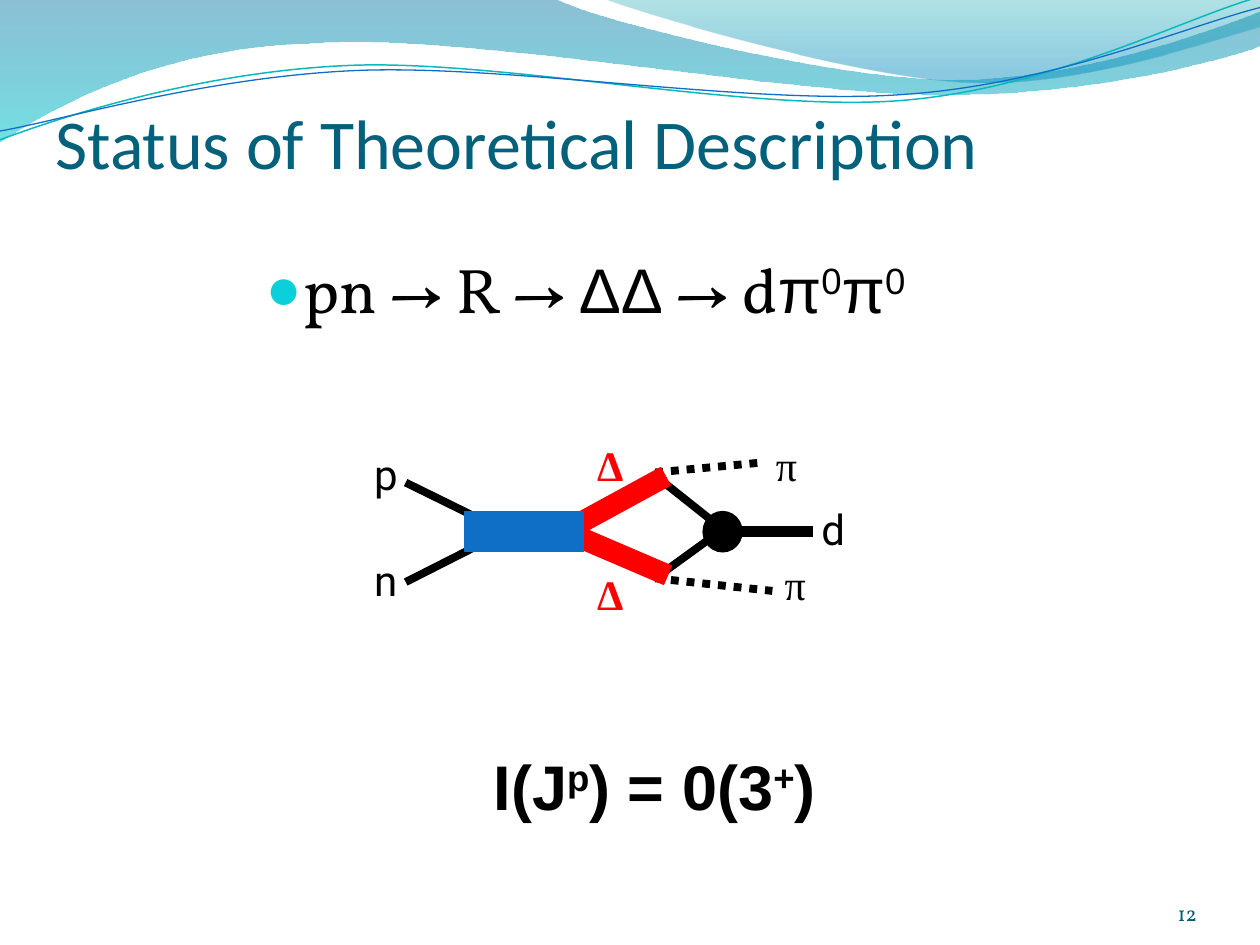
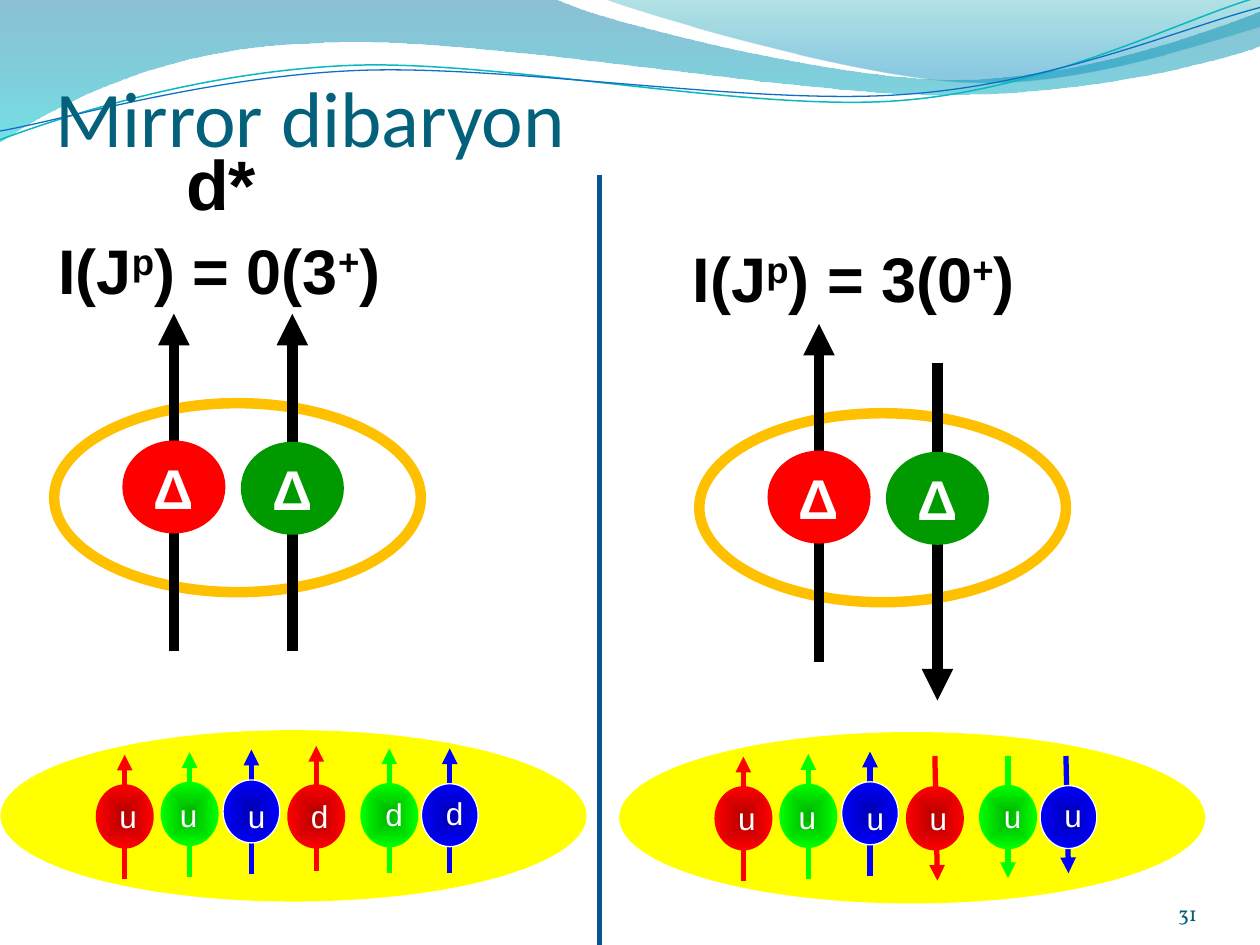
import pptx
import pptx.dml.color
import pptx.enum.dml
import pptx.enum.shapes
import pptx.enum.text
import pptx.oxml
import pptx.oxml.ns
import pptx.util
from lxml import etree

RGBColor = pptx.dml.color.RGBColor
SHAPE = pptx.enum.shapes.MSO_SHAPE
ANCHOR = pptx.enum.text.MSO_ANCHOR
ALIGN = pptx.enum.text.PP_ALIGN
DOTTED = pptx.enum.dml.MSO_LINE.ROUND_DOT
qn = pptx.oxml.ns.qn

BLACK = RGBColor(0x00, 0x00, 0x00)
WHITE = RGBColor(0xFF, 0xFF, 0xFF)
RED = RGBColor(0xFF, 0x00, 0x00)
LIME = RGBColor(0x00, 0xFF, 0x00)
PURE_BLUE = RGBColor(0x00, 0x00, 0xFF)
GREEN = RGBColor(0x00, 0x99, 0x00)
YELLOW = RGBColor(0xFF, 0xFF, 0x00)
ORANGE = RGBColor(0xFF, 0xC0, 0x00)
BLUE = RGBColor(0x0F, 0x6F, 0xC6)
NAVY = RGBColor(0x09, 0x52, 0x95)
TEAL = RGBColor(0x0A, 0xB8, 0xBF)
TITLE_COLOR = RGBColor(0x04, 0x61, 0x7B)
NUMBER_COLOR = RGBColor(0x04, 0x5D, 0x75)

GRADIENT = f'<a:gradFill {pptx.oxml.ns.nsdecls("a")}><a:gsLst>{{}}</a:gsLst>{{}}</a:gradFill>'
STOP = '<a:gs pos="{}000"><a:srgbClr val="{}"><a:{} val="{}000"/></a:srgbClr></a:gs>'
DOWNWARD = '<a:lin ang="5400000" scaled="1"/>'
FROM_CENTRE = ('<a:path path="shape"><a:fillToRect l="50000" t="50000" '
               'r="50000" b="50000"/></a:path>')

presentation = pptx.Presentation()
presentation.slide_width = pptx.util.Inches(10)
presentation.slide_height = pptx.util.Inches(7.5)
# The grid has 100 columns and 75 rows of square cells.
CELL = presentation.slide_width // 100


def add_box(slide, kind, box, fill=None, line=None, width=0.75, runs=(), size=18,
            font="Arial", color=BLACK, bold=False, wrap=True, inset=None,
            anchor=ANCHOR.TOP, align=ALIGN.LEFT):
    """Add a preset shape, or a text box if kind is None; a run led by ^ is raised."""
    place = [round(length * CELL) for length in box]
    if kind is None:
        shape = slide.shapes.add_textbox(*place)
    else:
        shape = slide.shapes.add_shape(kind, *place)
        shape.shadow.inherit = False
        shape.fill.background()
        if fill is not None:
            shape.fill.solid()
            shape.fill.fore_color.rgb = fill
        shape.line.color.rgb = line
        shape.line.width = pptx.util.Pt(width)
    if runs:
        frame = shape.text_frame
        frame.word_wrap = wrap
        frame.vertical_anchor = anchor
        if inset is not None:
            frame.margin_left = frame.margin_right = frame.margin_bottom = 0
            frame.margin_top = round(inset * CELL)
        paragraph = frame.paragraphs[0]
        paragraph.alignment = align
        for text in runs:
            run = paragraph.add_run()
            run.text = text.lstrip("^")
            run.font.size = pptx.util.Pt(size)
            run.font.name = font
            run.font.bold = bold
            run.font.color.rgb = color
            if text.startswith("^"):
                run._r.get_or_add_rPr().set("baseline", "30000")
    return shape


def add_line(slide, start, end, color, width, dash=None, arrow=False):
    connector = slide.shapes.add_connector(
        pptx.enum.shapes.MSO_CONNECTOR.STRAIGHT,
        *[round(length * CELL) for length in (*start, *end)])
    connector.line.color.rgb = color
    connector.line.width = pptx.util.Pt(width)
    if dash is not None:
        connector.line.dash_style = dash
    if arrow:
        etree.SubElement(connector.line._get_or_add_ln(), qn("a:tailEnd"), type="triangle")
    etree.SubElement(connector._element.spPr, qn("a:effectLst"))


# Header curves: start, segments (2 numbers: straight, 6: Bézier), gradient stops or line
header_curves = [
    ((0, 0), [(44, -0.1), (47.6, 1.7, 66.4, 6.3, 75.8, 6.3), (85.3, 6.3, 95.8, 2.6, 100, 0.9),
              (100.1, 3.6), (98.3, 4.4, 87, 7.6, 74.6, 7.5), (62.2, 7.5, 38.2, 2.8, 25.7, 3.4),
              (12.9, 3.6, 4.6, 8.3, -0.1, 11.3)],
     [(0, "0074A1", "alpha", 45), (100, "00C6CF", "alpha", 55)], None, 0),
    ((47.9, -0.1), [(50.9, 1.1, 68.2, 6.2, 76.9, 6.5), (85.6, 6.9, 96.1, 3.2, 100, 2.1),
                    (100, 0)],
     [(0, "00A1A9", "alpha", 30), (80, "008BBF", "alpha", 45)], None, 0),
    ((0, 11.1), [(4.8, 9.3, 15.8, 5.7, 27.7, 5.2), (39.5, 4.7, 59.3, 8.9, 71.3, 8),
                 (83.3, 7.1, 93.8, 1.5, 99.8, -0.2)], None, TEAL, 0.85),
    ((0, 10.4), [(4.7, 9.6, 16.4, 6.1, 28.3, 5.6), (40.3, 5.1, 59.7, 8.4, 71.7, 7.5),
                 (83.6, 6.7, 94.1, 2.1, 100, 0.6)], None, BLUE, 0.75),
]
slide_heads = [
    ("Status of Theoretical Description", 40, 14.6, "12"),
    ("Mirror dibaryon", 45, 12.95, "31"),
]
for title, title_size, title_bottom, number in slide_heads:
    slide = presentation.slides.add_slide(presentation.slide_layouts[6])
    for start, segments, stops, line_color, line_width in header_curves:
        points = [(x * CELL, y * CELL) for segment in segments
                  for x, y in zip(segment[::2], segment[1::2])]
        builder = slide.shapes.build_freeform(start[0] * CELL, start[1] * CELL)
        builder.add_line_segments(points, close=stops is not None)
        curve = builder.convert_to_shape()
        # Turn each three straight steps of a Bézier segment into one curve.
        steps = iter(list(curve._element.iter(qn("a:lnTo"))))
        for segment in segments:
            step = next(steps)
            if len(segment) == 6:
                step.tag = qn("a:cubicBezTo")
                for _ in range(2):
                    control = next(steps)
                    step.append(control[0])
                    control.getparent().remove(control)
        curve.shadow.inherit = False
        curve.fill.background()
        if stops:
            curve.line.fill.background()
            stop_xml = "".join(STOP.format(*stop) for stop in stops)
            curve._element.spPr[2] = pptx.oxml.parse_xml(GRADIENT.format(stop_xml, DOWNWARD))
        else:
            curve.line.color.rgb = line_color
            curve.line.width = pptx.util.Pt(line_width)
    add_box(slide, None, (4.4, title_bottom - 8.5, 90, 8.5), runs=[title], size=title_size,
            font="Calibri", color=TITLE_COLOR, inset=0.5, anchor=ANCHOR.BOTTOM)
    add_box(slide, None, (86.7, 69.5, 8.3, 4), runs=[number], size=12, font="Vollkorn",
            color=NUMBER_COLOR, inset=0, anchor=ANCHOR.BOTTOM, align=ALIGN.RIGHT)

theory_slide, mirror_slide = presentation.slides

# Reaction formula
reaction = add_box(theory_slide, None, (20.1, 19.4, 62.2, 8.7), size=36,
                   runs=["pn → R → ", "ΔΔ", " → d", "π", "^0", "π", "^0"])
paragraph = reaction.text_frame.paragraphs[0]
for run in (paragraph.runs[0], paragraph.runs[2]):
    run.font.name = "Vollkorn"
properties = paragraph._p.get_or_add_pPr()
properties.set("marL", str(3 * CELL))
properties.set("indent", str(-3 * CELL))
bullet_color = etree.SubElement(properties, qn("a:buClr"))
etree.SubElement(bullet_color, qn("a:srgbClr"), val="0BD0D9")
etree.SubElement(properties, qn("a:buSzPct"), val="95000")
etree.SubElement(properties, qn("a:buFont"), typeface="Arial")
etree.SubElement(properties, qn("a:buChar"), char="●")

# Reaction diagram
for start, end, dash in [
    ((52, 45.9), (61.3, 46.9), DOTTED),
    ((52, 37.5), (60.6, 36.7), DOTTED),
    ((52.7, 38.3), (56.6, 41.4), None),
    ((52.7, 45.4), (58.2, 41.4), None),
    ((32.2, 38.3), (38.5, 41.4), None),
    ((32.2, 46.2), (38.5, 43), None),
]:
    add_line(theory_slide, start, end, BLACK, 4.5, dash)
for kind, box, color, rotation in [
    (SHAPE.RECTANGLE, (45.4, 38.9, 7.9, 1.6), RED, 331.4),
    (SHAPE.RECTANGLE, (45.4, 43.3, 7.9, 1.6), RED, 23.2),
    (SHAPE.RECTANGLE, (36.9, 40.6, 9.4, 3.2), BLUE, 0),
    (SHAPE.OVAL, (55.8, 40.6, 3.1, 3.2), BLACK, 0),
]:
    add_box(theory_slide, kind, box, color, color).rotation = rotation
add_line(theory_slide, (58.2, 42.2), (64.5, 42.2), BLACK, 6)
for particle, left, top, width, font, color in [
    ("Δ", 46.4, 44.6, 4.1, "Times New Roman", RED),
    ("Δ", 46.4, 34.4, 4.1, "Times New Roman", RED),
    ("d", 64.2, 39.5, 3.2, "Roboto", BLACK),
    ("π", 61.3, 43.8, 3.7, "Times New Roman", BLACK),
    ("π", 60.6, 34.4, 3.7, "Times New Roman", BLACK),
    ("p", 28.7, 35.1, 3.2, "Roboto", BLACK),
    ("n", 28.7, 43.5, 3.2, "Roboto", BLACK),
]:
    add_box(theory_slide, None, (left, top, width, 5), runs=[particle], size=24,
            font=font, color=color, bold=color == RED)

# Quantum numbers
for slide, left, top, isospin, spin in [
    (theory_slide, 38.2, 58.8, 0, 3),
    (mirror_slide, 3.65, 17.9, 0, 3),
    (mirror_slide, 54, 18.5, 3, 0),
]:
    add_box(slide, None, (left, top, 28.1, 7), size=36, bold=True, wrap=False,
            runs=["I(J", "^p", f") = {isospin}({spin}", "^+", ")"])
add_box(mirror_slide, None, (13.8, 10.7, 7.6, 7.7), runs=["d*"], size=40, bold=True, wrap=False)
add_line(mirror_slide, (47.6, 13.9), (47.6, 75), NAVY, 3)

# Quarks: colour, arrow x, arrow bottom, ball top, letter left and top
quarks = [
    (RED, 9.9, 69.8, 62.3, 8.5, 62.8),
    (LIME, 15.05, 69.6, 62.1, 13.3, 62.7),
    (PURE_BLUE, 19.95, 69.4, 61.9, 18.7, 62.8),
    (RED, 25.1, 69.1, 62.3, 23.7, 62.8),
    (LIME, 30.9, 69.3, 62.2, 29.6, 62.6),
    (PURE_BLUE, 35.7, 69.3, 62.2, 34.4, 62.5),
]
ALL_UP = [None] * 6
# A downward spin has the shifts of its arrow's two ends and the tip's row.
HALF_DOWN = [None] * 3 + [(0, 0.2, 69.9), (0, 0, 69.7), (-0.2, 0, 69.3)]

for pair_x, pair_y, bag_x, bag_y, letters, spins in [
    (0, 0, 0, 0, "uuuddd", ALL_UP),
    (51.2, 0.8, 49.1, 0.15, "uuuuuu", HALF_DOWN),
]:
    add_box(mirror_slide, SHAPE.OVAL, (4.3 + pair_x, 32 + pair_y, 29.1, 15), None, ORANGE, 6)
    for x, top, color, down in [
        (13.8, 35.1, RED, False),
        (23.2, 35.2, GREEN, spins is HALF_DOWN),
    ]:
        x += pair_x
        tail, tip = (28.8, 55.6) if down else (51.7 + pair_y, 24.9 + pair_y)
        add_line(mirror_slide, (x, tail), (x, tip), BLACK, 6, arrow=True)
        add_box(mirror_slide, SHAPE.OVAL, (x - 3.95, top + pair_y, 7.9, 7.1), color, color, 2,
                runs=["Δ"], size=32, color=WHITE, bold=True,
                anchor=ANCHOR.MIDDLE, align=ALIGN.CENTER)

    add_box(mirror_slide, SHAPE.OVAL, (0.1 + bag_x, 58 + bag_y, 46.4, 13.5), YELLOW, YELLOW)
    for quark, letter, spin in zip(quarks, letters, spins):
        color, x, bottom, ball_top, letter_left, letter_top = quark
        x += bag_x
        if spin:
            tail_shift, tip_shift, tip = spin
            start, end = (x + tail_shift, 60), (x + tip_shift, tip)
        else:
            start, end = (x, bottom + bag_y), (x, bottom + bag_y - 9.9)
        add_line(mirror_slide, start, end, color, 3, arrow=True)
        outline = WHITE if color == PURE_BLUE else color
        ball = add_box(mirror_slide, SHAPE.OVAL, (x - 2.25, ball_top + bag_y, 4.5, 5),
                       color, outline)
        stop_xml = STOP.format(0, color, "shade", 46) + STOP.format(100, color, "shade", 100)
        ball._element.spPr[2] = pptx.oxml.parse_xml(GRADIENT.format(stop_xml, FROM_CENTRE))
        add_box(mirror_slide, None, (letter_left + bag_x, letter_top + bag_y, 2.6, 4),
                runs=[letter], color=WHITE)

presentation.save("out.pptx")
